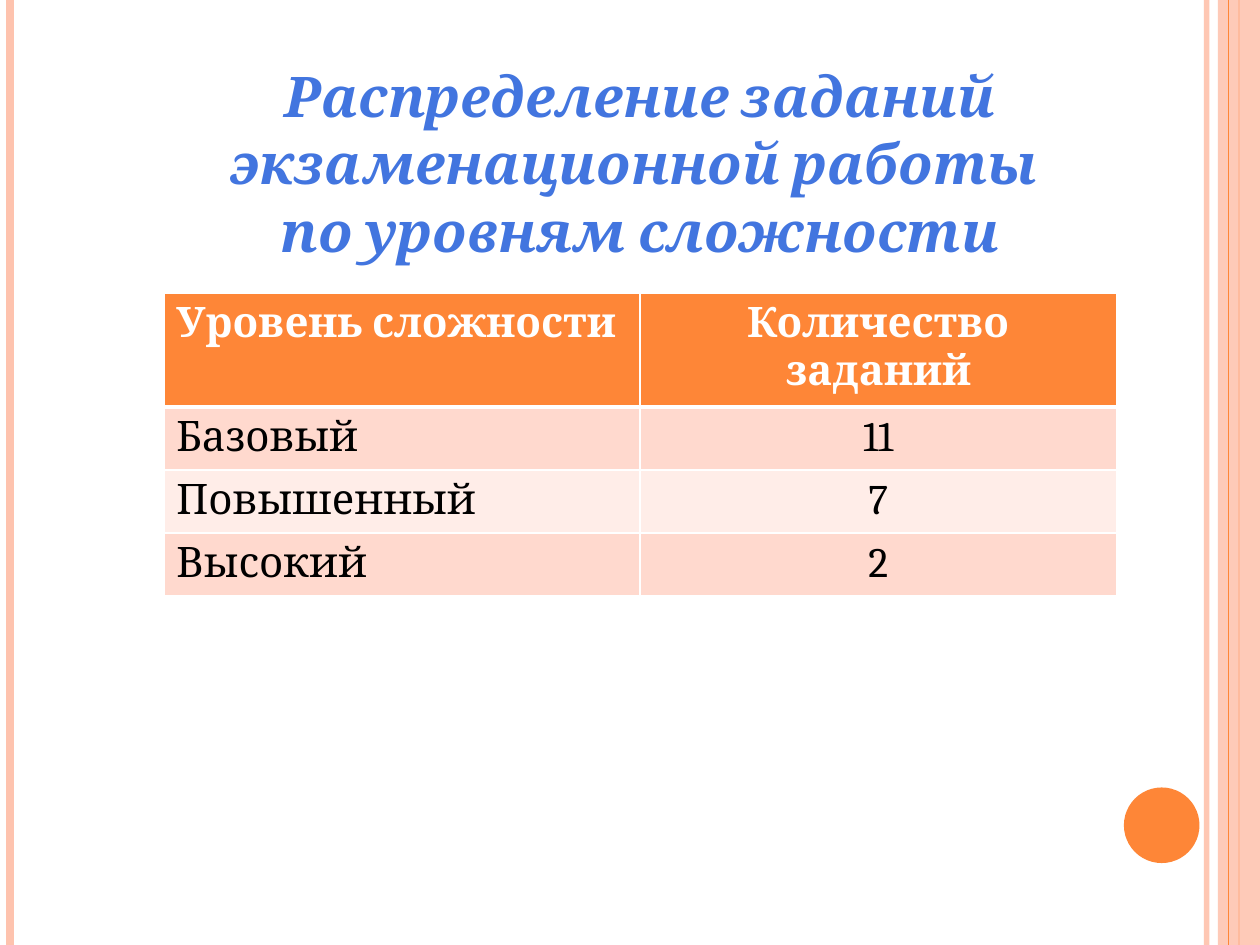
from lxml import etree
from pptx import Presentation
from pptx.dml.color import RGBColor
from pptx.enum.shapes import MSO_CONNECTOR, MSO_SHAPE
from pptx.enum.text import MSO_ANCHOR, MSO_AUTO_SIZE, PP_ALIGN
from pptx.oxml.ns import qn
from pptx.util import Inches, Pt

STRAIGHT = MSO_CONNECTOR.STRAIGHT
RECTANGLE, OVAL = MSO_SHAPE.RECTANGLE, MSO_SHAPE.OVAL
LEFT, CENTER = PP_ALIGN.LEFT, PP_ALIGN.CENTER
TOP = MSO_ANCHOR.TOP
NO_AUTOFIT = MSO_AUTO_SIZE.NONE

WIDTH, HEIGHT = 10, 7.5
ORANGE, PEACH, WHITE = "FE8637", "FEC3AE", "FFFFFF"
BANDS = ("FFD9CE", "FFEDE8")
TITLE_FORMAT = {"name": "Cambria", "size": Pt(32), "bold": True, "italic": True}
HEADER_FORMAT = {"name": "Cambria", "size": Pt(24), "bold": True}
BODY_FORMAT = {"name": "Cambria", "size": Pt(24), "bold": False}
TITLE_LINES = ("Распределение заданий экзаменационной работы ", "по уровням сложности")
LEVELS = (
    ("Уровень сложности", "Количество заданий"),
    ("Базовый", "11"),
    ("Повышенный", "7"),
    ("Высокий", "2"),
)


def color(value):
    """Turn a hex string into a colour."""
    return RGBColor.from_string(value)


def set_alpha(fill_element, percent):
    """Make the solid colour inside an element partly transparent."""
    color_element = next(fill_element.iter(qn("a:srgbClr")))
    etree.SubElement(color_element, qn("a:alpha")).set("val", str(percent * 1000))


def write(paragraph, text, align, font_format, font_color):
    """Put one formatted run into a paragraph."""
    paragraph.alignment = align
    run = paragraph.add_run()
    run.text = text
    for name, value in font_format.items():
        setattr(run.font, name, value)
    run.font.color.rgb = color(font_color)


def add_stripe(slide, x, line_color, width, opacity=100):
    """Draw a vertical line over the whole height of the slide."""
    stripe = slide.shapes.add_connector(STRAIGHT, Inches(x), 0, Inches(x), Inches(HEIGHT))
    stripe.line.color.rgb = color(line_color)
    stripe.line.width = Pt(width)
    if opacity < 100:
        set_alpha(stripe.line._ln, opacity)
    etree.SubElement(stripe._element.spPr, qn("a:effectLst"))


def add_solid(slide, preset, box, fill_color, opacity=100):
    """Draw a filled preset shape without an outline."""
    shape = slide.shapes.add_shape(preset, *map(Inches, box))
    shape.shadow.inherit = False
    shape.fill.solid()
    shape.fill.fore_color.rgb = color(fill_color)
    shape.line.fill.background()
    if opacity < 100:
        set_alpha(shape._element.spPr.find(qn("a:solidFill")), opacity)


def add_decoration(slide, band_width):
    """Draw the edge stripes, the right band and the circle."""
    band_left = WIDTH - band_width
    add_stripe(slide, band_left - 0.09, PEACH, 3, 93)
    add_stripe(slide, 0.08, PEACH, 4.5)
    add_stripe(slide, band_left + band_width / 2, ORANGE, 1.5)
    add_solid(slide, RECTANGLE, (band_left, 0, band_width, HEIGHT), PEACH, 87)
    add_stripe(slide, band_left + band_width / 4, ORANGE, 0.75)
    add_solid(slide, OVAL, (8.92, HEIGHT * 5 / 6, 0.6, 0.6), ORANGE)


def place_title(slide, box):
    """Move the title placeholder into its box and fill it."""
    title = slide.shapes.title
    title.left, title.top, title.width, title.height = map(Inches, box)
    frame = title.text_frame
    frame_format = {"word_wrap": True, "auto_size": NO_AUTOFIT, "vertical_anchor": TOP}
    for name, value in frame_format.items():
        setattr(frame, name, value)
    for index, text in enumerate(TITLE_LINES):
        paragraph = frame.add_paragraph() if index else frame.paragraphs[0]
        write(paragraph, text, CENTER, TITLE_FORMAT, "4275DF")


def set_borders(cell, bottom_width, top_width):
    """Give a cell white borders, which precede its fill."""
    properties = cell._tc.get_or_add_tcPr()
    widths = {"a:lnL": 1, "a:lnR": 1, "a:lnT": top_width, "a:lnB": bottom_width}
    for index, (tag, width) in enumerate(widths.items()):
        border = etree.Element(qn(tag), w=str(Pt(width)))
        fill = etree.SubElement(border, qn("a:solidFill"))
        etree.SubElement(fill, qn("a:srgbClr")).set("val", WHITE)
        properties.insert(index, border)


def add_level_table(slide, box, header_height):
    """Build the table of difficulty levels in its box."""
    left, top, width, height = box
    row_count, column_count = len(LEVELS), len(LEVELS[0])
    table = slide.shapes.add_table(row_count, column_count, *map(Inches, box)).table
    body_height = (height - header_height) / (row_count - 1)
    for row, values in enumerate(LEVELS):
        is_header = row == 0
        table.rows[row].height = Inches(header_height if is_header else body_height)
        for column, text in enumerate(values):
            cell = table.cell(row, column)
            cell.fill.solid()
            cell.fill.fore_color.rgb = color(ORANGE if is_header else BANDS[(row - 1) % 2])
            set_borders(cell, 3 if is_header else 1, 3 if row == 1 else 1)
            write(
                cell.text_frame.paragraphs[0],
                text,
                CENTER if column else LEFT,
                HEADER_FORMAT if is_header else BODY_FORMAT,
                WHITE if is_header else "000000",
            )


def main():
    """Build and save the presentation."""
    presentation = Presentation()
    presentation.slide_width, presentation.slide_height = Inches(WIDTH), Inches(HEIGHT)
    slide = presentation.slides.add_slide(presentation.slide_layouts[5])
    add_decoration(slide, WIDTH / 30)
    place_title(slide, (1.14, 0.44, 7.88, 1.72))
    add_level_table(slide, (1.3, 2.33, 7.56, 2.4), 0.9)
    presentation.save("out.pptx")


if __name__ == "__main__":
    main()
